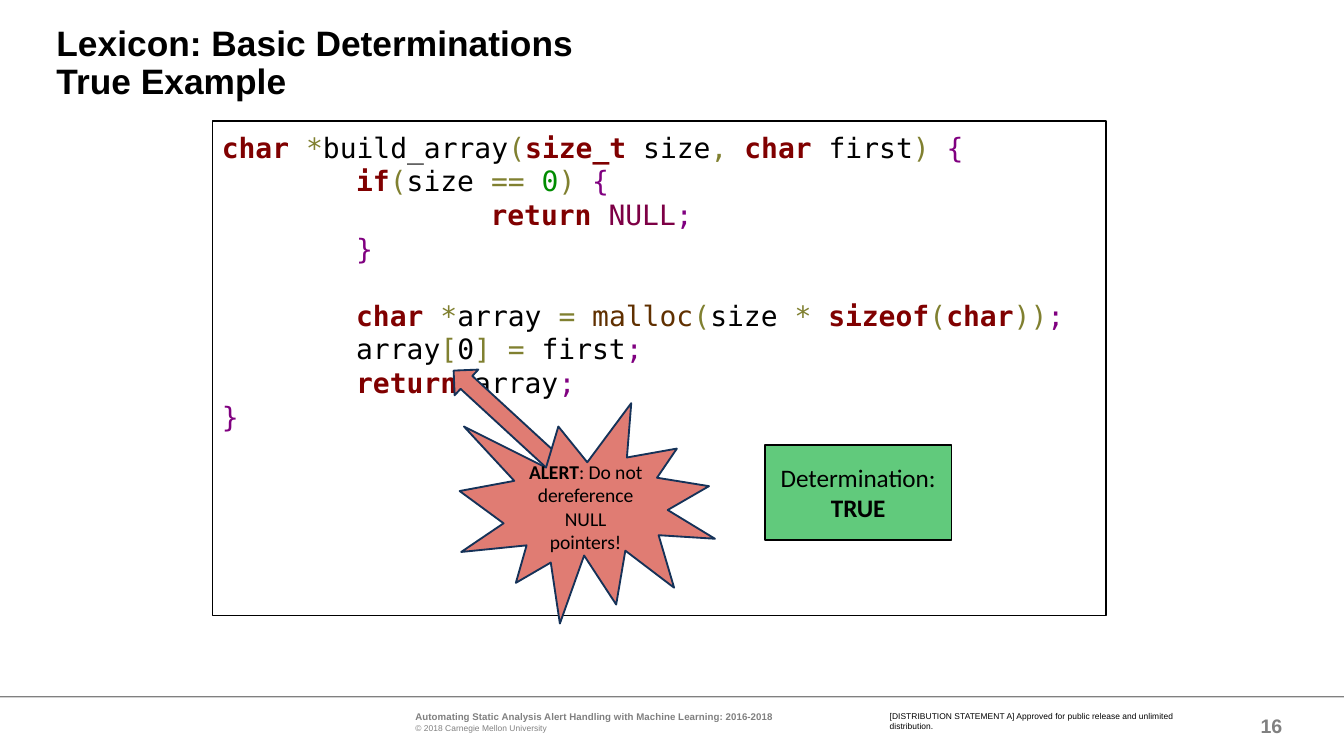
from lxml.etree import SubElement as Sub
from pptx import Presentation
from pptx.dml.color import RGBColor as RGB
from pptx.enum.shapes import MSO_SHAPE as Kind
from pptx.enum.text import MSO_ANCHOR as Anchor, PP_ALIGN as Align
from pptx.oxml.ns import qn
from pptx.util import Inches, Pt

BLACK = RGB(0x00, 0x00, 0x00)
GRAY = RGB(0x80, 0x80, 0x80)
NAVY = RGB(0x15, 0x32, 0x58)
CORAL = RGB(0xE0, 0x7C, 0x73)
GREEN = RGB(0x61, 0xCA, 0x7C)
WORD = RGB(0x80, 0x00, 0x00)
SIGN = RGB(0x80, 0x80, 0x30)
MARK = RGB(0x80, 0x00, 0x80)
DIGIT = RGB(0x00, 0x8C, 0x00)
CONST = RGB(0x7D, 0x00, 0x45)
CALL = RGB(0x60, 0x30, 0x00)

MONO = "DejaVu Sans Mono"
CODE = [
    [("char ", WORD), ("*", SIGN), ("build_array", BLACK), ("(", SIGN),
     ("size_t", WORD), (" size", BLACK), (", ", SIGN), ("char ", WORD),
     ("first", BLACK), (") ", SIGN), ("{", MARK)],
    [("\tif", WORD), ("(", SIGN), ("size ", BLACK), ("== ", SIGN),
     ("0", DIGIT), (") ", SIGN), ("{", MARK)],
    [("\t\treturn ", WORD), ("NULL", CONST), (";", MARK)],
    [("\t}", MARK)],
    [("\tchar ", WORD), ("*", SIGN), ("array ", BLACK), ("= ", SIGN),
     ("malloc", CALL), ("(", SIGN), ("size ", BLACK), ("* ", SIGN),
     ("sizeof", WORD), ("(", SIGN), ("char", WORD), ("))", SIGN),
     (";", MARK)],
    [("\tarray", BLACK), ("[", SIGN), ("0", BLACK), ("] =", SIGN),
     (" first", BLACK), (";", MARK)],
    [("\treturn", WORD), (" array", BLACK), (";", MARK)],
    [("}", MARK)],
]
GAP_AT = 4  # the code line that follows an empty line


class Page:
    def __init__(self, slide, font="Arial"):
        self.slide = slide
        self.font = font

    def run(self, para, text, size, color=BLACK, bold=False, font=None):
        run = para.add_run()
        run.text = text
        style = run.font
        style.name = font or self.font
        style.size = Pt(size)
        style.bold = bold
        style.color.rgb = color

    def para(self, frame, first, align=Align.LEFT):
        para = frame.paragraphs[0] if first else frame.add_paragraph()
        para.alignment = align
        return para

    def tabs(self, para, stops):
        """Set left tab stops, given in inches."""
        row = Sub(para._p.get_or_add_pPr(), qn("a:tabLst"))
        for stop in stops:
            Sub(row, qn("a:tab"), pos=str(Inches(stop)), algn="l")

    def frame(self, shape, pad, anchor=Anchor.TOP):
        """Set wrapping, anchor and the left, top, right, bottom insets."""
        frame = shape.text_frame
        frame.word_wrap = True
        frame.vertical_anchor = anchor
        (frame.margin_left, frame.margin_top,
         frame.margin_right, frame.margin_bottom) = map(Inches, pad)
        return frame

    def text(self, box, lines, align=Align.LEFT, anchor=Anchor.TOP):
        """Add a text box; each line is (text, size, color, bold)."""
        shape = self.slide.shapes.add_textbox(*map(Inches, box))
        frame = self.frame(shape, (0, 0, 0, 0), anchor)
        for i, line in enumerate(lines):
            self.run(self.para(frame, i == 0, align), *line)

    def title(self, box, lines, size):
        shape = self.slide.shapes.add_textbox(*map(Inches, box))
        para = self.para(self.frame(shape, (0, 0, 0, 0)), True)
        para.line_spacing = 0.9
        for i, line in enumerate(lines):
            if i:
                para.add_line_break()
            self.run(para, line, size, bold=True)

    def shape(self, kind, box, fill=None, line=None, width=1, turn=0):
        shape = self.slide.shapes.add_shape(kind, *map(Inches, box))
        shape.shadow.inherit = False
        shape.rotation = turn
        if fill is None:
            shape.fill.background()
        else:
            shape.fill.solid()
            shape.fill.fore_color.rgb = fill
        if line is None:
            shape.line.fill.background()
        else:
            shape.line.color.rgb = line
            shape.line.width = Pt(width)
        return shape

    def label(self, shape, size, lines):
        """Centre text in a shape; each line is a list of (text, bold)."""
        frame = self.frame(shape, (0.1, 0.05, 0.1, 0.05), Anchor.MIDDLE)
        for i, line in enumerate(lines):
            para = self.para(frame, i == 0, Align.CENTER)
            for text, bold in line:
                self.run(para, text, size, bold=bold, font="Calibri")

    def code(self, box, lines, size):
        shape = self.shape(Kind.RECTANGLE, box, line=BLACK, width=0.75)
        frame = self.frame(shape, (0.07, 0.07, 0, 0.07))
        for i, line in enumerate(lines):
            para = self.para(frame, i == 0)
            if i == GAP_AT:
                para.space_before = Pt(18)
            self.tabs(para, (1, 2))
            for text, color in line:
                self.run(para, text, size, color, color == WORD, MONO)


def main():
    deck = Presentation()
    deck.slide_width = Inches(10)
    deck.slide_height = Inches(10) * 9 // 16
    page = Page(deck.slides.add_slide(deck.slide_layouts[6]))

    page.text((9.1, 5.25, 0.44, 0.3), [("16", 10.5, GRAY, True)],
              Align.RIGHT, Anchor.MIDDLE)
    page.text((3.09, 5.29, 3.37, 0.16), [
        ("Automating Static Analysis Alert Handling with Machine Learning: "
         "2016-2018", 5.25, GRAY, True),
        ("© 2018 Carnegie Mellon University", 4.5, GRAY, False)])
    page.text((6.62, 5.29, 2.29, 0.15), [
        ("[DISTRIBUTION STATEMENT A] Approved for public release and "
         "unlimited distribution.", 4.5, BLACK, False)])
    page.shape(Kind.RECTANGLE, (0, 5.18, 10, 0.01), GRAY)

    page.title((0.42, 0.19, 8.33, 0.59),
               ["Lexicon: Basic Determinations", "True Example"], 18.9)
    page.code((1.58, 0.9, 6.65, 3.68), CODE, 15)

    page.shape(Kind.LEFT_ARROW, (3.23, 3, 1.1, 0.26), CORAL, NAVY, turn=42.6)
    burst = page.shape(Kind.EXPLOSION1, (3.42, 3, 1.9, 1.64), CORAL, NAVY)
    page.label(burst, 10.5, [
        [("ALERT", True), (": Do not dereference NULL pointers!", False)]])
    result = page.shape(Kind.RECTANGLE, (5.69, 3.31, 1.39, 0.71), GREEN, BLACK)
    page.label(result, 13.5, [[("Determination:", False)], [("TRUE", True)]])

    deck.save("out.pptx")


if __name__ == "__main__":
    main()
